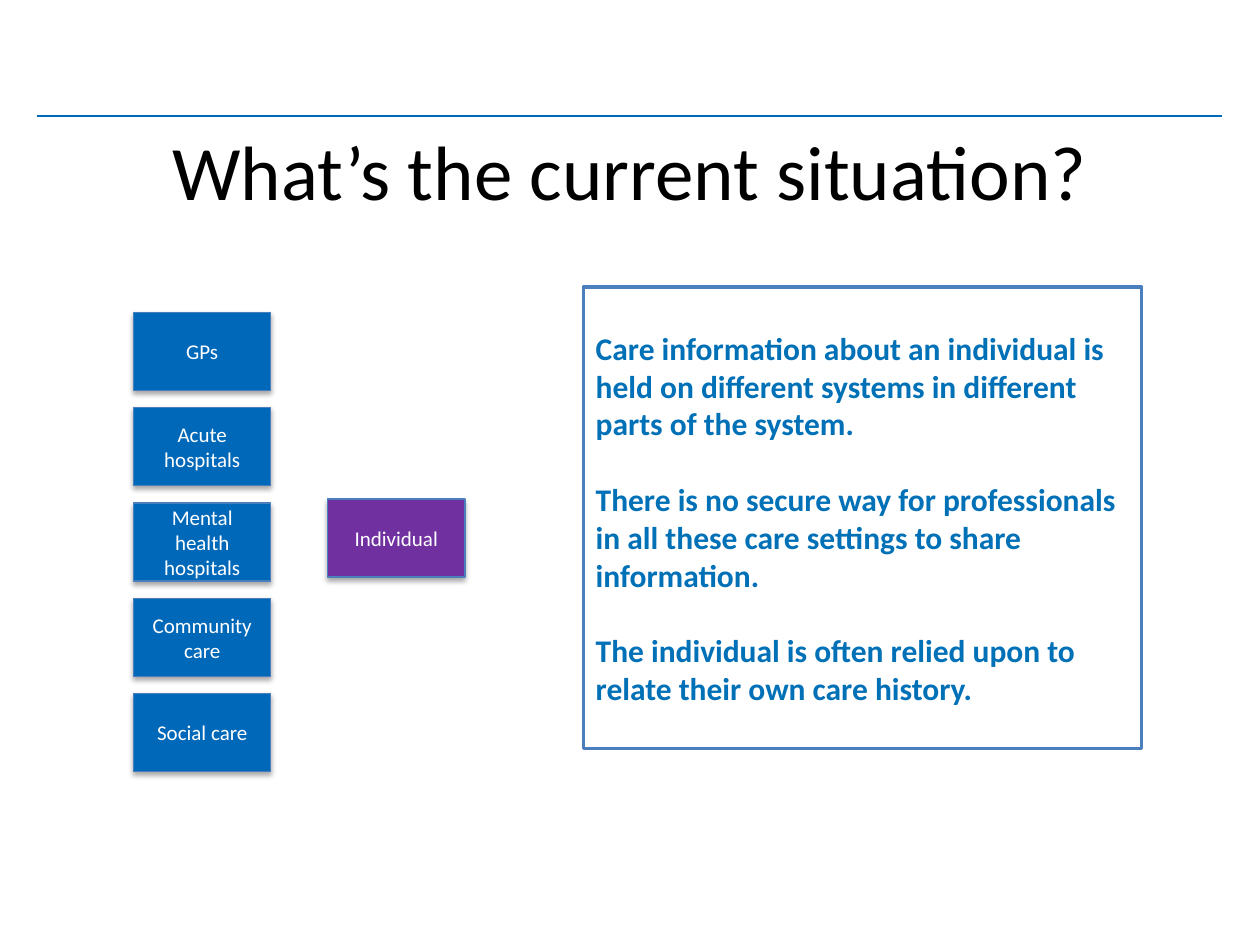
import pptx
import pptx.util
import pptx.dml.color
import pptx.enum.shapes
import pptx.enum.text
import pptx.oxml

RGBColor = pptx.dml.color.RGBColor
Pt = pptx.util.Pt
SHAPE = pptx.enum.shapes.MSO_SHAPE.RECTANGLE
ALIGN = pptx.enum.text.PP_ALIGN
BLUE = RGBColor(0x00, 0x68, 0xB9)
TEXT = RGBColor(0x00, 0x70, 0xB7)
EDGE = RGBColor(0x4B, 0x7E, 0xBC)
PURPLE = RGBColor(0x70, 0x30, 0xA0)
WHITE = RGBColor(0xFF, 0xFF, 0xFF)
BLACK = RGBColor(0x00, 0x00, 0x00)
NS = 'xmlns:a="http://schemas.openxmlformats.org/drawingml/2006/main"'
SHADOW = (f'<a:effectLst {NS}><a:outerShdw blurRad="{Pt(3.1)}" dist="{Pt(1.8)}" '
          'dir="5400000" rotWithShape="0"><a:srgbClr val="000000">'
          '<a:alpha val="35000"/></a:srgbClr></a:outerShdw></a:effectLst>')

deck = pptx.Presentation()
deck.slide_width = pptx.util.Inches(10)
deck.slide_height = pptx.util.Inches(7.5)
slide = deck.slides.add_slide(deck.slide_layouts[6])
shapes = slide.shapes

# Grid of 100 columns by 75 rows
col = deck.slide_width / 100
row = deck.slide_height / 75


def write(shape, *lines, size=12, color=WHITE, bold=False, align=ALIGN.CENTER, gap=0):
    frame = shape.text_frame
    frame.word_wrap = True
    frame.vertical_anchor = pptx.enum.text.MSO_ANCHOR.MIDDLE
    for i, line in enumerate(lines):
        para = frame.add_paragraph() if i else frame.paragraphs[0]
        para.text = line
        para.alignment = align
        para.space_before = Pt(gap if i else 0)
        para.font.name = "Calibri"
        para.font.size = Pt(size)
        para.font.bold = bold
        para.font.color.rgb = color


def place(x, y, wide, high, fill=None, edge=0.75):
    box = shapes.add_shape(SHAPE, int(x * col), int(y * row), int(wide * col), int(high * row))
    box.shadow.inherit = False
    box.line.color.rgb = EDGE
    box.line.width = Pt(edge)
    if fill is None:
        box.fill.background()
    else:
        box.fill.solid()
        box.fill.fore_color.rgb = fill
    return box


# Header rule
rule = shapes.add_connector(pptx.enum.shapes.MSO_CONNECTOR.STRAIGHT, int(2.9 * col),
                            int(9.2 * row), int(97 * col), int(9.2 * row))
rule.line.color.rgb = BLUE
rule.line.width = Pt(1)
rule._element.spPr.append(pptx.oxml.parse_xml(f"<a:effectLst {NS}/>"))

# Title
title = shapes.add_textbox(int(5 * col), int(9.4 * row), int(90 * col), int(8.1 * row))
write(title, "What’s the current situation?", size=44, color=BLACK)

# Care settings in one column, the individual beside them
names = ["GPs", "Acute hospitals", "Mental health hospitals", "Community care", "Social care"]
cards = [(name, 10.6, 24.8 + i * 7.56, BLUE) for i, name in enumerate(names)]
cards.append(("Individual", 26, 39.6, PURPLE))
for name, x, y, fill in cards:
    card = place(x, y, 10.9, 6.2, fill)
    props = card._element.spPr
    props.remove(props[-1])
    props.append(pptx.oxml.parse_xml(SHADOW))
    write(card, name)

# Summary panel
panel = place(46.3, 22.8, 44.3, 36.6, edge=2)
write(panel,
      "Care information about an individual is held on different systems in different "
      "parts of the system.",
      "There is no secure way for professionals in all these care settings to share information.",
      "The individual is often relied upon to relate their own care history.",
      size=18, color=TEXT, bold=True, align=ALIGN.LEFT, gap=21.6)

deck.save("out.pptx")
